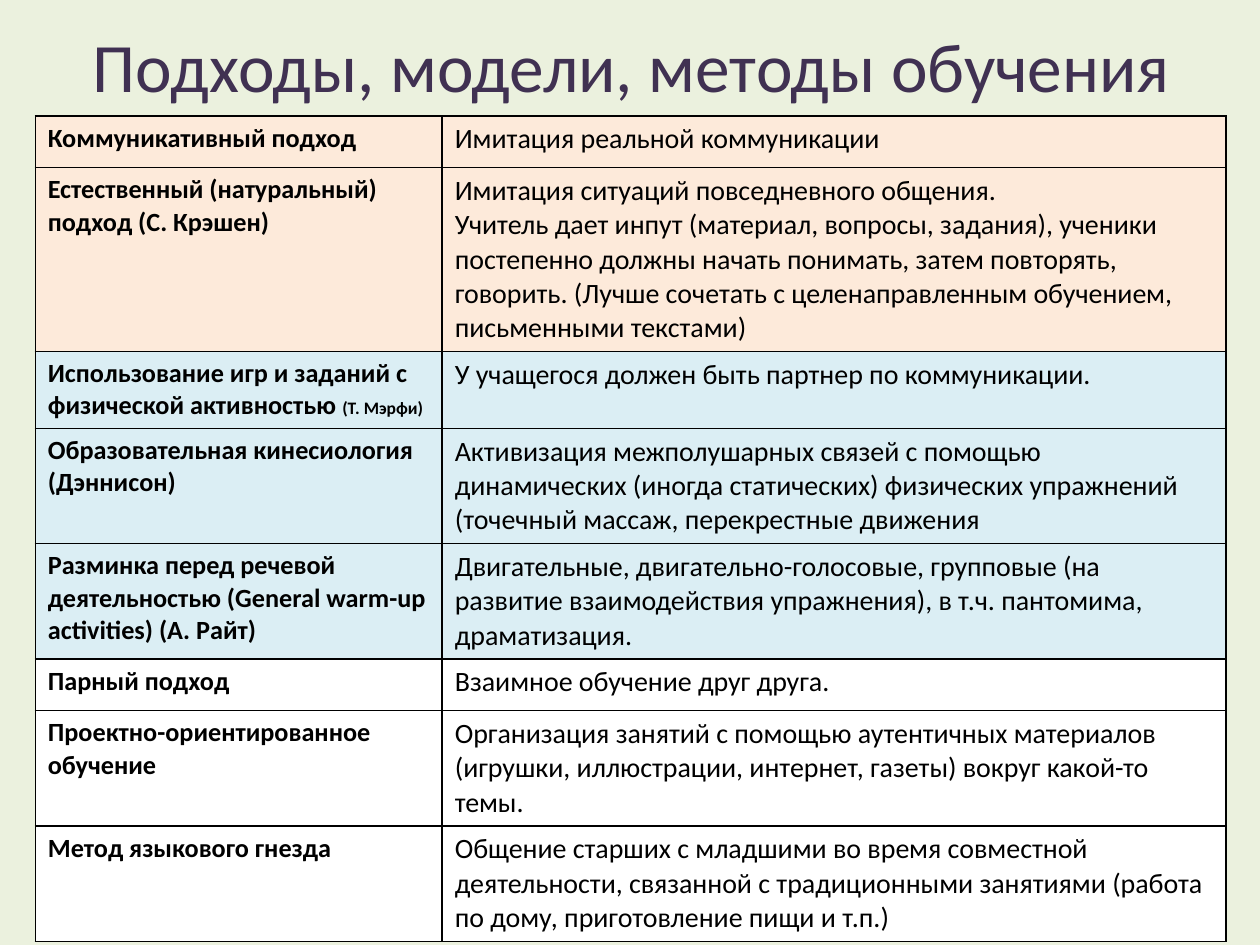
from lxml import etree
from pptx import Presentation
from pptx.dml.color import RGBColor
from pptx.enum.text import MSO_ANCHOR, MSO_AUTO_SIZE, PP_ALIGN
from pptx.oxml.ns import qn
from pptx.util import Inches, Pt

CENTER = PP_ALIGN.CENTER
MIDDLE = MSO_ANCHOR.MIDDLE
NO_AUTOFIT = MSO_AUTO_SIZE.NONE
FONT = "Calibri"
BLACK = "000000"
PEACH, BLUE, WHITE = "FDEADA", "DBEEF4", "FFFFFF"
COLUMN_WIDTHS = (3.23, 6.22)
ROW_HEIGHT = 0.41
NAME_SIZE, AUTHOR_SIZE, DESCRIPTION_SIZE = 15, 10, 16

APPROACHES = [
    (PEACH, ["Коммуникативный подход"], ["Имитация реальной коммуникации"]),
    (PEACH, ["Естественный (натуральный) подход (С. Крэшен)"],
     ["Имитация ситуаций повседневного общения.",
      "Учитель дает инпут (материал, вопросы, задания), ученики постепенно должны "
      "начать понимать, затем повторять, говорить. (Лучше сочетать с "
      "целенаправленным обучением, письменными текстами)"]),
    (BLUE, ["Использование игр и заданий с физической активностью ", "(Т. Мэрфи)"],
     ["У учащегося должен быть партнер по коммуникации."]),
    (BLUE, ["Образовательная кинесиология (Дэннисон)"],
     ["Активизация межполушарных связей с помощью динамических (иногда статических) "
      "физических упражнений (точечный массаж, перекрестные движения"]),
    (BLUE, ["Разминка перед речевой деятельностью (General warm-up activities) (А. Райт)"],
     ["Двигательные, двигательно-голосовые, групповые (на развитие взаимодействия "
      "упражнения), в т.ч. пантомима, драматизация."]),
    (WHITE, ["Парный подход"], ["Взаимное обучение друг друга."]),
    (WHITE, ["Проектно-ориентированное обучение"],
     ["Организация занятий с помощью аутентичных материалов (игрушки, иллюстрации, "
      "интернет, газеты) вокруг какой-то темы."]),
    (WHITE, ["Метод языкового гнезда"],
     ["Общение старших с младшими во время совместной деятельности, связанной с "
      "традиционными занятиями (работа по дому, приготовление пищи и т.п.)"]),
]


def paint(color_holder, color):
    """Give a solid fill a hex colour."""
    color_holder.solid()
    color_holder.fore_color.rgb = RGBColor.from_string(color)


def add_run(paragraph, text, size, color=BLACK, bold=False):
    """Append one formatted run to a paragraph."""
    run = paragraph.add_run()
    run.text = text
    run.font.name = FONT
    run.font.size = Pt(size)
    run.font.bold = bold
    paint(run.font.fill, color)


def add_borders(cell):
    """Draw a thin black line on each side of a cell."""
    properties = cell._tc.get_or_add_tcPr()
    for position, side in enumerate(("a:lnL", "a:lnR", "a:lnT", "a:lnB")):
        line = etree.Element(qn(side), w=str(Pt(1)))
        fill = etree.SubElement(line, qn("a:solidFill"))
        etree.SubElement(fill, qn("a:srgbClr"), val=BLACK)
        properties.insert(position, line)


def place_title(slide, left, top, width, height):
    """Move the title placeholder into its box and write the heading."""
    title = slide.shapes.title
    title.left, title.top = Inches(left), Inches(top)
    title.width, title.height = Inches(width), Inches(height)
    frame = title.text_frame
    frame.auto_size = NO_AUTOFIT
    frame.vertical_anchor = MIDDLE
    heading = frame.paragraphs[0]
    heading.alignment = CENTER
    add_run(heading, "Подходы, модели, методы обучения", 39.6, "403152")


def fill_row(name_cell, description_cell, color, name_parts, description):
    """Write one approach and its description into a table row."""
    for cell in (name_cell, description_cell):
        paint(cell.fill, color)
        add_borders(cell)
    name = name_cell.text_frame.paragraphs[0]
    for text, size in zip(name_parts, (NAME_SIZE, AUTHOR_SIZE)):
        add_run(name, text, size, bold=True)
    frame = description_cell.text_frame
    for index, text in enumerate(description):
        paragraph = frame.add_paragraph() if index else frame.paragraphs[0]
        add_run(paragraph, text, DESCRIPTION_SIZE)


def place_approaches(slide, left, top, width, height):
    """Build the table of approaches in its box."""
    table = slide.shapes.add_table(
        len(APPROACHES), len(COLUMN_WIDTHS),
        Inches(left), Inches(top), Inches(width), Inches(height)).table
    table.first_row = table.horz_banding = False
    for column, column_width in zip(table.columns, COLUMN_WIDTHS):
        column.width = Inches(column_width)
    for row, approach in zip(table.rows, APPROACHES):
        row.height = Inches(ROW_HEIGHT)
        fill_row(*row.cells, *approach)


def main():
    """Build the slide and save it."""
    presentation = Presentation()
    presentation.slide_width, presentation.slide_height = Inches(10), Inches(7.5)
    slide = presentation.slides.add_slide(presentation.slide_layouts[5])
    paint(slide.background.fill, "EBF1DE")
    place_title(slide, 0.51, 0.21, 9, 0.61)
    place_approaches(slide, 0.28, 0.92, sum(COLUMN_WIDTHS), 6.44)
    presentation.save("out.pptx")


if __name__ == "__main__":
    main()
